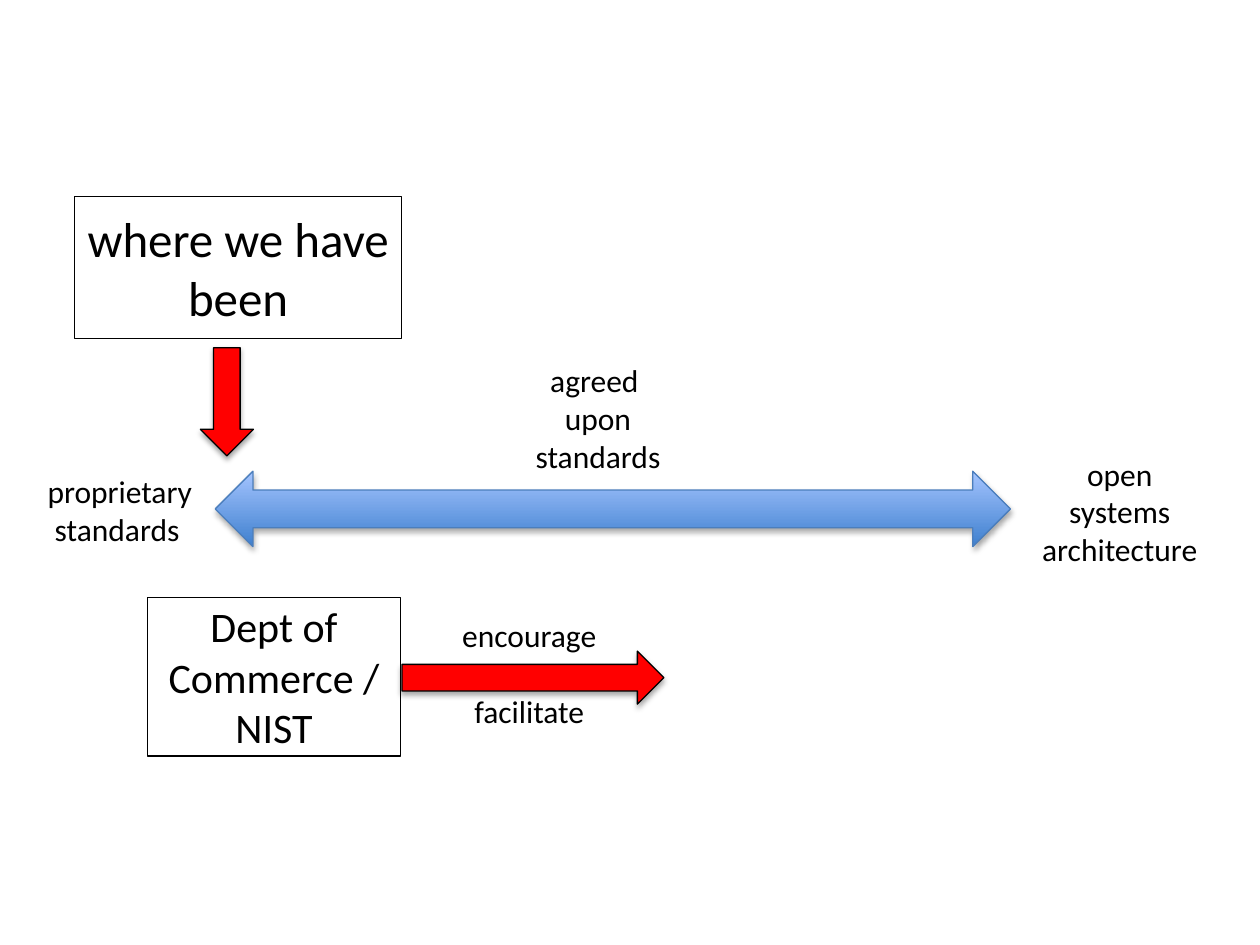
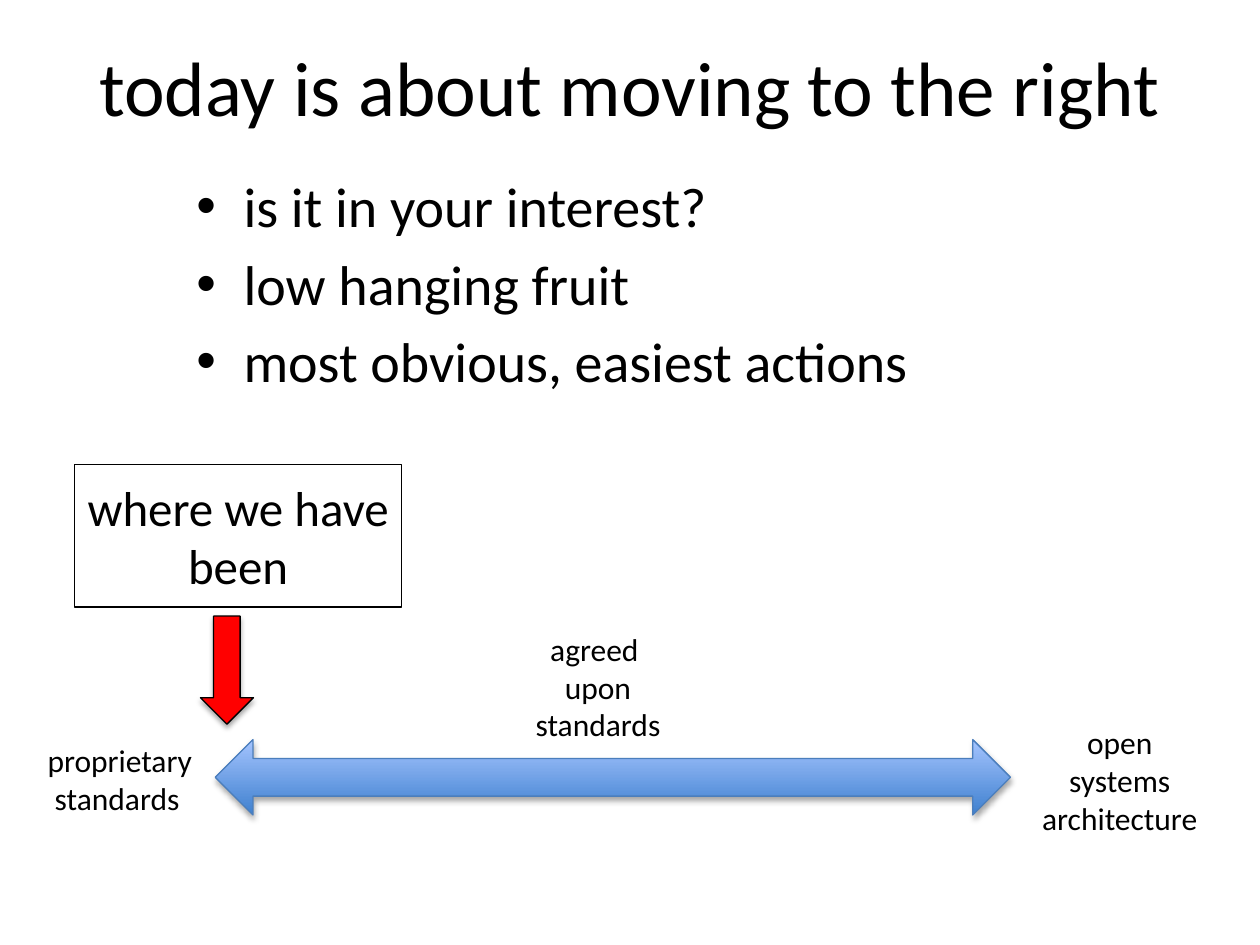
from dataclasses import dataclass

from lxml.etree import SubElement
from pptx import Presentation
from pptx.dml.color import RGBColor
from pptx.enum.shapes import MSO_SHAPE
from pptx.enum.text import MSO_ANCHOR, MSO_AUTO_SIZE, PP_ALIGN
from pptx.oxml.ns import qn
from pptx.shapes.autoshape import Shape
from pptx.slide import Slide
from pptx.util import Cm, Pt


@dataclass(frozen=True)
class Theme:
    font: str = "Calibri"
    black: RGBColor = RGBColor(0, 0, 0)
    red: RGBColor = RGBColor(0xFF, 0, 0)
    blue_dark: RGBColor = RGBColor(0x3F, 0x80, 0xCE)
    blue_light: RGBColor = RGBColor(0xA4, 0xC4, 0xFF)
    blue_line: RGBColor = RGBColor(0x4B, 0x7E, 0xBC)
    line_width: float = 0.75
    title: int = 44
    body: int = 32
    place: int = 28
    agency: int = 24
    label: int = 18


THEME = Theme()


@dataclass(frozen=True)
class Area:
    """A rectangle on the slide, in centimetres."""
    left: float
    top: float
    width: float
    height: float

    def lengths(self, down: float = 0) -> tuple[Cm, Cm, Cm, Cm]:
        return Cm(self.left), Cm(self.top + down), Cm(self.width), Cm(self.height)


@dataclass(frozen=True)
class Text:
    area: Area
    lines: tuple[str, ...]
    size: int = THEME.label
    align: PP_ALIGN = PP_ALIGN.CENTER
    anchor: MSO_ANCHOR = MSO_ANCHOR.TOP
    gap: float = 0
    bullet: bool = False
    framed: bool = False
    grow: bool = True


@dataclass(frozen=True)
class Arrow:
    area: Area
    kind: MSO_SHAPE = MSO_SHAPE.DOWN_ARROW
    rotation: int = 0


def boxed(area: Area, line: str, size: int) -> Text:
    return Text(area, (line,), size, anchor=MSO_ANCHOR.MIDDLE, framed=True, grow=False)


SPECTRUM = (
    boxed(Area(1.5, 3.96, 6.6, 2.87), "where we have been", THEME.place),
    Arrow(Area(4.34, 9.5, 16.03, 1.52), MSO_SHAPE.LEFT_RIGHT_ARROW),
    Text(Area(0.71, 9.4, 3.61, 1.8), ("proprietary", " standards"), align=PP_ALIGN.LEFT),
    Text(Area(20.37, 9.04, 4.55, 2.57), ("open ", "systems ", "architecture ")),
    Text(Area(9.78, 7.16, 4.55, 2.57), ("agreed ", "upon", "standards")),
    Arrow(Area(4.04, 7.01, 1.07, 2.18)),
)
AGENCY_ROLE = (
    boxed(Area(2.97, 12.04, 5.11, 3.2), "Dept of Commerce / NIST", THEME.agency),
    Arrow(Area(10.21, 11.02, 1.07, 5.28), rotation=270),
    Text(Area(8.08, 12.29, 5.18, 2.57), ("encourage", "facilitate"), gap=22),
)
MOVING_RIGHT = (
    Text(Area(1.27, 0.13, 22.86, 3.18), ("today is about moving to the right",),
         THEME.title, anchor=MSO_ANCHOR.MIDDLE, grow=False),
    Text(Area(3.71, 3.33, 17.86, 4.93),
         ("is it in your interest?", "low hanging fruit", "most obvious, easiest actions"),
         THEME.body, align=PP_ALIGN.LEFT, gap=6, bullet=True, grow=False),
)
SPECTRUM_DROP = 5.41


def set_line(sp: Shape, color: RGBColor) -> None:
    sp.line.color.rgb = color
    sp.line.width = Pt(THEME.line_width)


def add_shadow(sp: Shape) -> None:
    sp.shadow.inherit = False
    effects = sp._element.spPr.find(qn("a:effectLst"))
    shadow = SubElement(effects, qn("a:outerShdw"), blurRad=str(Pt(3.1)),
                        dist=str(Pt(1.8)), dir="5400000", rotWithShape="0")
    color = SubElement(shadow, qn("a:srgbClr"), val=str(THEME.black))
    SubElement(color, qn("a:alpha"), val="35000")


def add_bullet(p) -> None:
    pPr = p._p.get_or_add_pPr()
    pPr.set("marL", str(Cm(0.95)))
    pPr.set("indent", str(Cm(-0.95)))
    SubElement(pPr, qn("a:buFont"), typeface="Arial")
    SubElement(pPr, qn("a:buChar"), char="•")


def draw_text(s: Slide, text: Text, down: float) -> None:
    lengths = text.area.lengths(down)
    if text.framed:
        sp = s.shapes.add_shape(MSO_SHAPE.RECTANGLE, *lengths)
        sp.shadow.inherit = False
        sp.fill.background()
        set_line(sp, THEME.black)
    else:
        sp = s.shapes.add_textbox(*lengths)
    tf = sp.text_frame
    tf.word_wrap = True
    tf.vertical_anchor = text.anchor
    tf.auto_size = MSO_AUTO_SIZE.SHAPE_TO_FIT_TEXT if text.grow else MSO_AUTO_SIZE.NONE
    for i, line in enumerate(text.lines):
        p = tf.add_paragraph() if i else tf.paragraphs[0]
        p.alignment = text.align
        if text.gap and (i or text.bullet):
            p.space_before = Pt(text.gap)
        if text.bullet:
            add_bullet(p)
        r = p.add_run()
        r.text = line
        r.font.name = THEME.font
        r.font.size = Pt(text.size)
        r.font.color.rgb = THEME.black


def draw_arrow(s: Slide, arrow: Arrow, down: float) -> None:
    sp = s.shapes.add_shape(arrow.kind, *arrow.area.lengths(down))
    sp.rotation = arrow.rotation
    if arrow.kind == MSO_SHAPE.LEFT_RIGHT_ARROW:
        sp.fill.gradient()
        sp.fill.gradient_angle = 90
        colors = (THEME.blue_dark, THEME.blue_light)
        for position, (stop, color) in enumerate(zip(sp.fill.gradient_stops, colors)):
            stop.position = position
            stop.color.rgb = color
        set_line(sp, THEME.blue_line)
    else:
        sp.fill.solid()
        sp.fill.fore_color.rgb = THEME.red
        set_line(sp, THEME.black)
    add_shadow(sp)


def draw(s: Slide, items: tuple[Text | Arrow, ...], down: float = 0) -> None:
    for item in items:
        if isinstance(item, Text):
            draw_text(s, item, down)
        else:
            draw_arrow(s, item, down)


def main() -> None:
    prs = Presentation()
    prs.slide_width, prs.slide_height = Cm(25.4), Cm(19.05)
    blank = prs.slide_layouts[6]

    s = prs.slides.add_slide(blank)
    draw(s, SPECTRUM)
    draw(s, AGENCY_ROLE)

    s = prs.slides.add_slide(blank)
    draw(s, MOVING_RIGHT)
    draw(s, SPECTRUM, SPECTRUM_DROP)

    prs.save("out.pptx")


if __name__ == "__main__":
    main()
